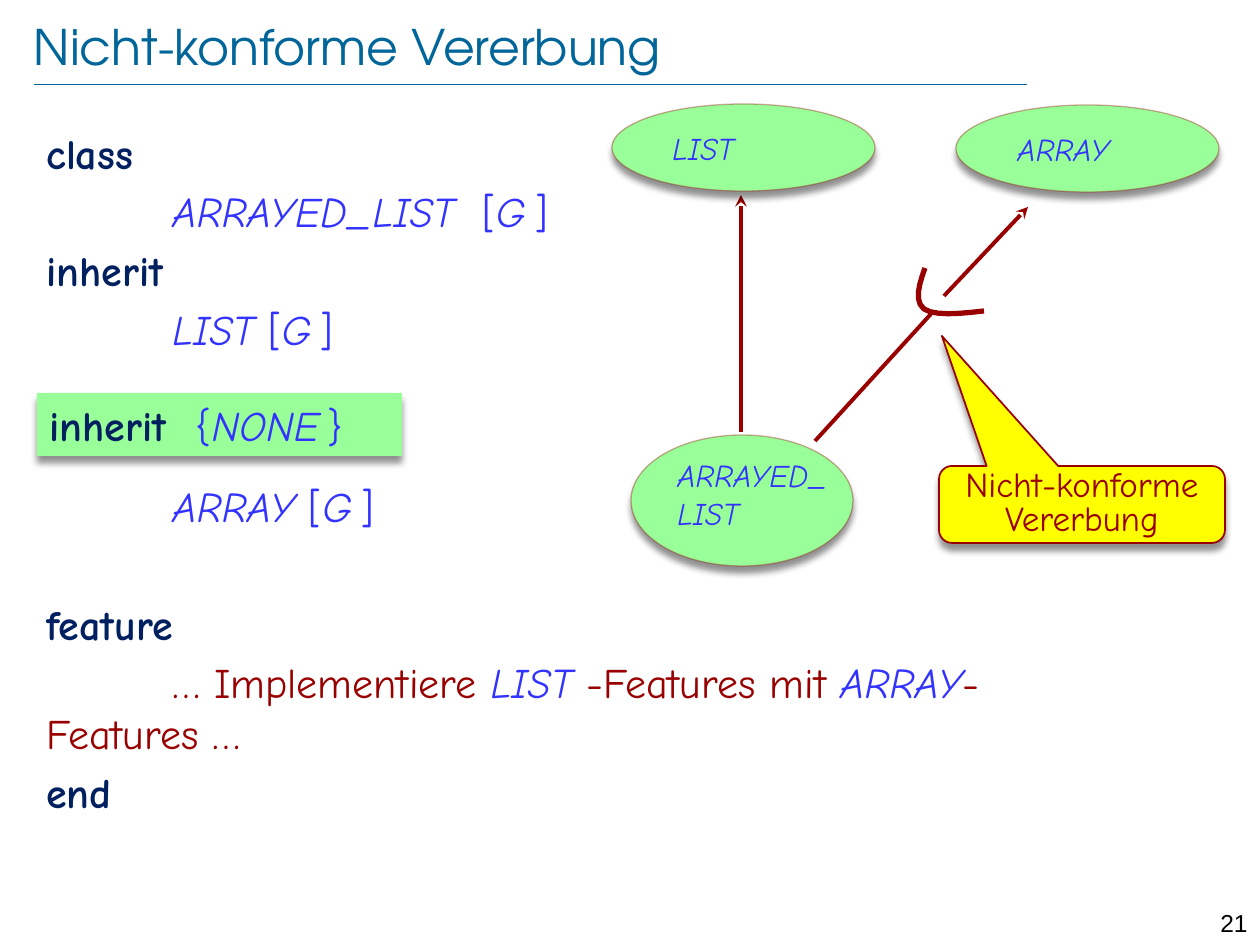
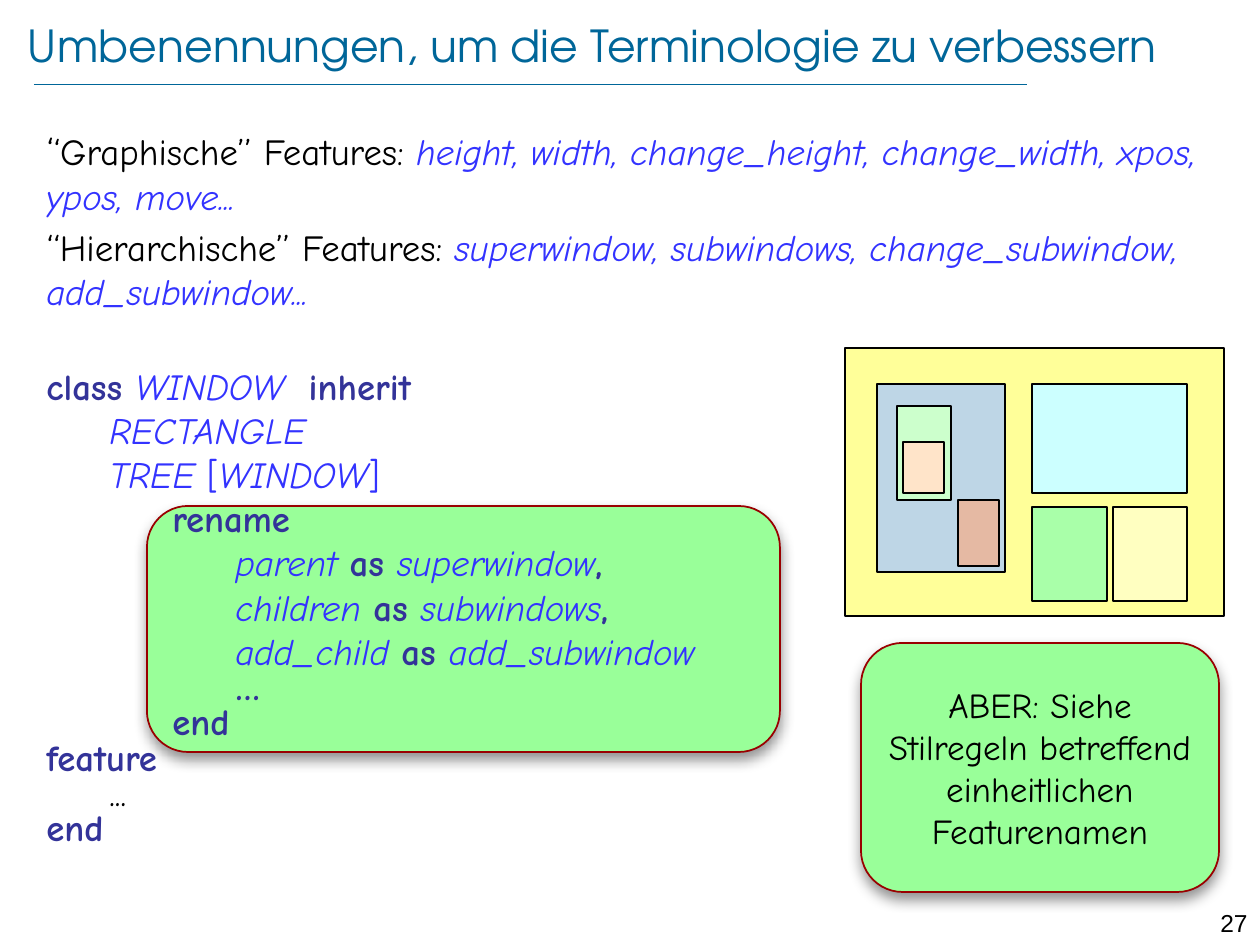
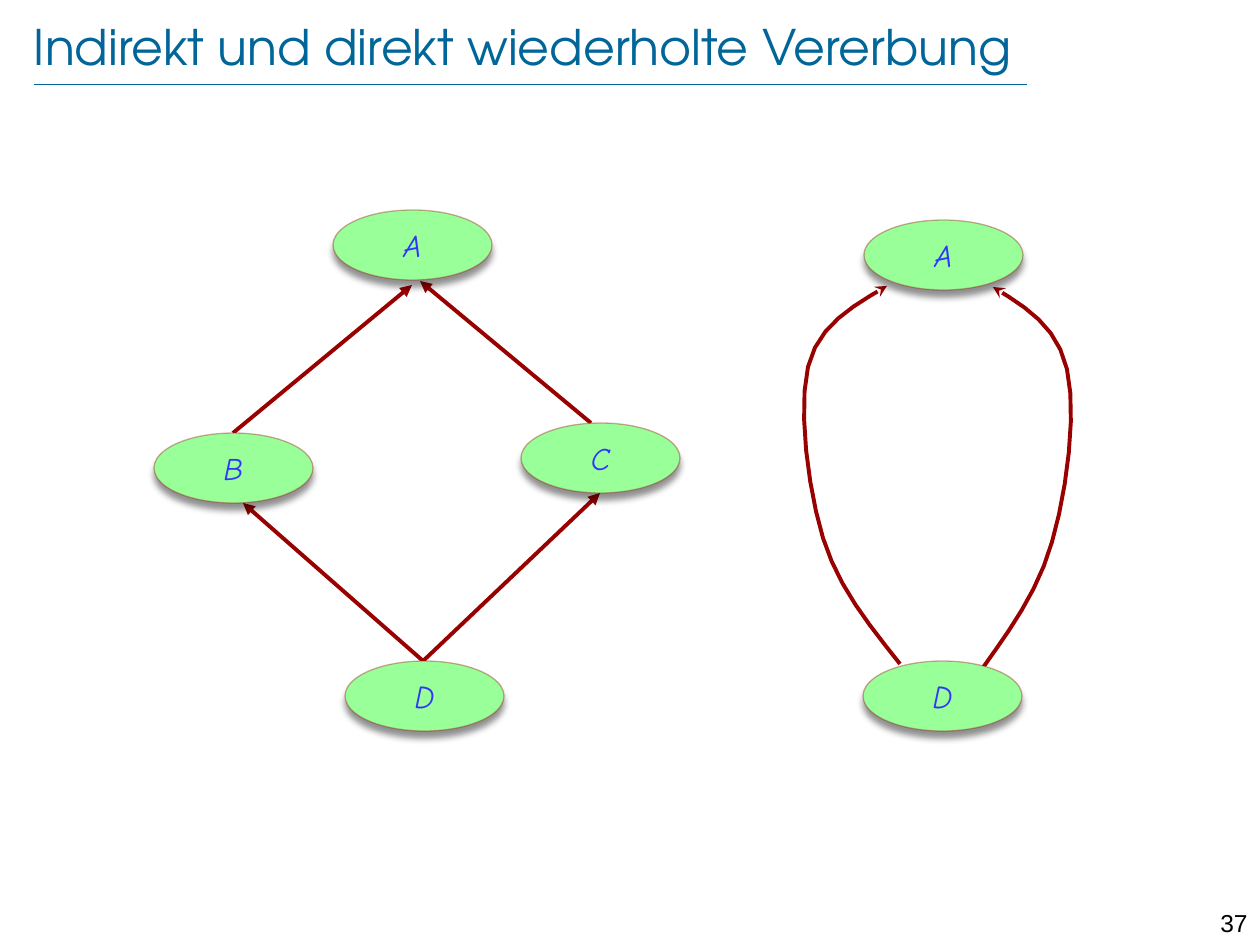
from lxml import etree
from pptx import Presentation
from pptx.dml.color import RGBColor
from pptx.enum.shapes import MSO_CONNECTOR, MSO_SHAPE
from pptx.enum.text import MSO_ANCHOR, MSO_AUTO_SIZE, PP_ALIGN
from pptx.oxml.ns import qn
from pptx.util import Pt

OVAL, RECT, ROUND = MSO_SHAPE.OVAL, MSO_SHAPE.RECTANGLE, MSO_SHAPE.ROUNDED_RECTANGLE
CALLOUT = MSO_SHAPE.ROUNDED_RECTANGULAR_CALLOUT
LINE = MSO_CONNECTOR.STRAIGHT
TOP, MIDDLE = MSO_ANCHOR.TOP, MSO_ANCHOR.MIDDLE
LEFT, CENTER, RIGHT = PP_ALIGN.LEFT, PP_ALIGN.CENTER, PP_ALIGN.RIGHT
FIXED = MSO_AUTO_SIZE.NONE

PX = 914400 / 126
WIDE, HIGH = 1260, 945

TEAL = RGBColor(0x00, 0x66, 0x99)
BLACK = RGBColor(0x00, 0x00, 0x00)
BLUE = RGBColor(0x33, 0x33, 0xFF)
NAVY = RGBColor(0x00, 0x20, 0x60)
INDIGO = RGBColor(0x33, 0x33, 0x99)
RED = RGBColor(0x99, 0x00, 0x00)
GREEN = RGBColor(0x99, 0xFF, 0x99)
YELLOW = RGBColor(0xFF, 0xFF, 0x00)
CREAM = RGBColor(0xFF, 0xFF, 0x99)
STEEL = RGBColor(0xBE, 0xD6, 0xE6)
MINT = RGBColor(0xCC, 0xFF, 0xCC)
PEACH = RGBColor(0xFF, 0xE4, 0xC9)
CLAY = RGBColor(0xE5, 0xB9, 0xA3)
AQUA = RGBColor(0xCC, 0xFF, 0xFF)
LIME = RGBColor(0xA9, 0xFF, 0xA9)
LEMON = RGBColor(0xFF, 0xFF, 0xC1)

# Text looks
HEAD = {"name": "TeX Gyre Adventor", "rgb": TEAL}
FOOT = {"name": "Arial", "size": Pt(14), "rgb": BLACK}
COMIC = {"name": "Comic Neue"}
KEY = {"bold": True, "rgb": NAVY}
WORD = {"bold": True, "rgb": INDIGO}
NAME = {"italic": True, "rgb": BLUE}
MARK = {"rgb": BLUE}
THIN = {"italic": True, "rgb": BLUE, "size": Pt(14)}
SAY = {"rgb": RED}
PLAIN = {"rgb": BLACK}
GENERIC = [("[", MARK), ("G", NAME), (" ", THIN), ("]", MARK)]


def px(*vals):
    return [round(v * PX) for v in vals]


def shift(box, part):
    """Move a part's box, or a list of points, by the corner of its region."""
    return [v + box[i % 2] if i < 2 else v for i, v in enumerate(part)]


def move(box, point):
    return point[0] + box[0], point[1] + box[1]


def dress(font, look):
    for key, val in look.items():
        if key == "rgb":
            font.color.rgb = val
        else:
            setattr(font, key, val)


def write(frame, paras, size, align=LEFT, anchor=TOP, inset=None, wrap=True, base=COMIC):
    """Each paragraph is (runs, format); format may hold an indent in px."""
    frame.auto_size = FIXED
    frame.word_wrap = wrap
    frame.vertical_anchor = anchor
    if inset:
        for side, val in zip(("left", "top", "right", "bottom"), px(*inset)):
            setattr(frame, "margin_" + side, val)
    for num, (runs, form) in enumerate(paras):
        para = frame.add_paragraph() if num else frame.paragraphs[0]
        para.alignment = align
        for key, val in form.items():
            if key == "indent":
                props = para._p.get_or_add_pPr()
                props.set("marL", "0")
                props.set("indent", str(px(val)[0]))
            else:
                setattr(para, key, val)
        for text, look in runs:
            if text == "\n":
                para.add_line_break()
                continue
            run = para.add_run()
            run.text = text
            dress(run.font, {**base, "size": Pt(size), **look})


def stroke(part, color, width, head=None, alpha=None):
    part.line.color.rgb = color
    part.line.width = Pt(width)
    ln = part._element.spPr.find(qn("a:ln"))
    if alpha:
        tint = next(ln.iter(qn("a:srgbClr")))
        etree.SubElement(tint, qn("a:alpha")).set("val", str(alpha * 1000))
    if head:
        etree.SubElement(ln, qn("a:tailEnd")).set("type", head)


def shade(shape, blur):
    glow = etree.SubElement(shape._element.spPr.find(qn("a:effectLst")), qn("a:outerShdw"))
    attrs = {"blurRad": Pt(blur), "dist": Pt(4), "dir": 5400000, "rotWithShape": 0}
    for key, val in attrs.items():
        glow.set(key, str(val))
    tint = etree.SubElement(glow, qn("a:srgbClr"))
    tint.set("val", "000000")
    etree.SubElement(tint, qn("a:alpha")).set("val", "43000")


def block(slide, kind, box, fill, line=None, width=0.75, alpha=None, blur=0):
    shape = slide.shapes.add_shape(kind, *px(*box))
    shape.shadow.inherit = False
    shape.fill.solid()
    shape.fill.fore_color.rgb = fill
    if line is None:
        shape.line.fill.background()
    else:
        stroke(shape, line, width, alpha=alpha)
    if blur:
        shade(shape, blur)
    return shape


def label(slide, box, paras, size, **form):
    area = slide.shapes.add_textbox(*px(*box))
    write(area.text_frame, paras, size, **form)


def link(slide, start, end, color=RED, width=2.25, head=None):
    wire = slide.shapes.add_connector(LINE, *px(*start, *end))
    stroke(wire, color, width, head)
    etree.SubElement(wire._element.spPr, qn("a:effectLst"))


def curve(slide, points, width=2.25, head=None, steps=6):
    """Chain of cubic curves: a start, then two controls and an end for each."""
    track = []
    for first in range(0, len(points) - 1, 3):
        quad = points[first:first + 4]
        for step in range(1, steps + 1):
            t = step / steps
            rate = ((1 - t) ** 3, 3 * t * (1 - t) ** 2, 3 * t * t * (1 - t), t ** 3)
            track.append(px(*(sum(r * p[axis] for r, p in zip(rate, quad)) for axis in (0, 1))))
    pen = slide.shapes.build_freeform(*px(*points[0]))
    pen.add_line_segments(track, close=False)
    shape = pen.convert_to_shape()
    shape.shadow.inherit = False
    shape.fill.background()
    stroke(shape, RED, width, head)


def oval(slide, box, text=None):
    shape = block(slide, OVAL, box, GREEN, RED, alpha=34, blur=4)
    if text:
        write(shape.text_frame, [([(text, NAME)], {})], 18, CENTER, MIDDLE, wrap=False)


def frame(deck, title, number, box, size=28):
    """Slide with its title, rule and number."""
    slide = deck.slides.add_slide(deck.slide_layouts[5])
    link(slide, (34, 84), (1027, 84), TEAL, 0.25)
    label(slide, (1191, 902, 69, 30), [([(number, {})], {})], 14, align=RIGHT, base=FOOT)
    head = slide.shapes.title
    head.left, head.top, head.width, head.height = px(*box)
    write(head.text_frame, [([(title, {})], {})], size, anchor=MIDDLE,
          inset=(0, 0, 0, 0), base=HEAD)
    return slide


# Slide 1: code on the left
def arrayed(slide, box):
    gap = {"space_before": Pt(4.8)}
    deep = {**gap, "indent": 126}
    label(slide, box, [
        ([("class", KEY)], {}),
        ([("ARRAYED_LIST  ", NAME)] + GENERIC, deep),
        ([("inherit", KEY)], gap),
        ([("LIST ", NAME)] + GENERIC, deep),
        ([("ARRAY ", NAME)] + GENERIC, {**deep, "space_before": Pt(72.5)}),
        ([("feature", KEY)], {"space_before": Pt(38.2)}),
        ([("… Implementiere ", SAY), ("LIST ", NAME), ("-Features mit ", SAY),
          ("ARRAY", NAME), ("-", SAY), ("\n", SAY), ("Features …", SAY)], deep),
        ([("end", KEY)], gap),
    ], 24)
    none = block(slide, RECT, shift(box, (3, 272, 365, 63)), GREEN, blur=4)
    write(none.text_frame, [([("inherit  ", KEY), ("{", MARK), ("NONE", NAME),
                              (" ", THIN), ("}", MARK)], {})], 24)


# Slide 1: inheritance tree on the right
def tree(slide, box):
    for start, end, head in (((129, 328), (129, 91), "stealth"),
                             ((203, 337), (319, 210), None),
                             ((332, 192), (416, 103), "stealth")):
        link(slide, move(box, start), move(box, end), head=head)
    cut = [(372, 207), (347, 210), (322, 212), (312, 205), (302, 197), (307, 181), (313, 164)]
    curve(slide, [move(box, p) for p in cut], 3)
    for text, ring, area in (("LIST", (0, 0, 263, 87), (48, 19, 198, 50)),
                             ("ARRAY", (344, 1, 263, 87), (393, 20, 198, 50)),
                             ("ARRAYED_LIST", (19, 331, 222, 131), (53, 346, 188, 89))):
        oval(slide, shift(box, ring))
        label(slide, shift(box, area), [([(text, NAME)], {})], 18)
    note = block(slide, CALLOUT, shift(box, (327, 362, 286, 77)), YELLOW, RED, 1, blur=4)
    for num, val in enumerate((-0.49, -2.19, 0.17)):
        note.adjustments[num] = val
    write(note.text_frame, [([("Nicht-konforme Vererbung", SAY)], {"line_spacing": 0.8})],
          20, CENTER, MIDDLE, (0, 6, 0, 6))


# Slide 2: feature lists and class text over the rename panel
def rename(slide, box):
    block(slide, ROUND, shift(box, (113, 385, 633, 246)), GREEN, RED, 1, blur=8)
    one, two, three = ({"indent": 63 * level} for level in (1, 2, 3))
    tight = {"line_spacing": 0.8}
    pairs = (("parent ", "superwindow", ","), ("children ", "subwindows", ","),
             ("add_child ", "add_subwindow", ""))
    label(slide, box, [
        ([("‘", {**PLAIN, "size": Pt(22)}), ("‘Graphische’’ Features: ", PLAIN),
          ("height, width, change_height, change_width, xpos, ypos, move...", NAME)], {}),
        ([("‘‘Hierarchische’’ Features: ", PLAIN),
          ("superwindow, subwindows, change_subwindow, add_subwindow...", NAME)],
         {"space_before": Pt(4.2)}),
        ([("class ", WORD), ("WINDOW  ", NAME), ("inherit", WORD)], {"space_before": Pt(29)}),
        ([("RECTANGLE", NAME)], one),
        ([("TREE ", NAME), ("[", MARK), ("WINDOW", NAME), ("]", MARK)], one),
        ([("rename", WORD)], two),
        *(([(old, NAME), ("as ", WORD), (new, NAME)] + ([(end, WORD)] if end else []), three)
          for old, new, end in pairs),
        ([("…", WORD)], {**three, **tight}),
        ([("end", WORD)], {**two, **tight}),
        ([("feature", WORD)], tight),
        ([("...", PLAIN)], {**one, **tight}),
        ([("end", WORD)], tight),
    ], 21)


# Slide 2: nested windows
def windows(slide, box):
    for part, fill in (((0, 0, 379, 268), CREAM), ((32, 36, 128, 188), STEEL),
                       ((52, 58, 54, 94), MINT), ((58, 94, 41, 51), PEACH),
                       ((113, 152, 41, 66), CLAY), ((187, 36, 155, 109), AQUA),
                       ((187, 159, 75, 94), LIME), ((268, 159, 74, 94), LEMON)):
        block(slide, RECT, shift(box, part), fill, BLACK)


def remark(slide, box):
    shape = block(slide, ROUND, box, GREEN, RED, 1, blur=8)
    text = "ABER: Siehe Stilregeln betreffend einheitlichen Featurenamen"
    write(shape.text_frame, [([(text, PLAIN)], {})], 20, CENTER, MIDDLE)


# Slide 3: one function for each graph
def nodes(slide, box, places):
    for text, x, y in places:
        oval(slide, shift(box, (x, y, 159, 70)), text)


def diamond(slide, box):
    for start, end in (((79, 223), (258, 75)), ((437, 213), (266, 71)),
                       ((267, 453), (446, 283)), ((268, 450), (89, 293))):
        link(slide, move(box, start), move(box, end), head="triangle")
    nodes(slide, box, (("A", 179, 0), ("D", 191, 451), ("B", 0, 223), ("C", 367, 213)))


def loop(slide, box):
    left = [(102, 444), (71, 405), (40, 367), (25, 318), (10, 269),
            (0, 190), (10, 147), (20, 105), (55, 86), (89, 66)]
    right = [(184, 449), (211, 411), (240, 372), (254, 322), (269, 271),
             (279, 192), (269, 149), (259, 106), (228, 87), (195, 67)]
    for side in (left, right):
        curve(slide, [move(box, p) for p in side], head="stealth")
    nodes(slide, box, (("A", 66, 0), ("D", 65, 441)))


def main():
    deck = Presentation()
    deck.slide_width, deck.slide_height = px(WIDE, HIGH)

    slide = frame(deck, "Nicht-konforme Vererbung", "21", (34, 16, 1095, 60))
    arrayed(slide, (34, 121, 1184, 777))
    tree(slide, (612, 104, 613, 463))

    slide = frame(deck, "Umbenennungen, um die Terminologie zu verbessern", "27",
                  (28, 0, 1192, 90), 25.2)
    rename(slide, (34, 121, 1184, 777))
    windows(slide, (845, 348, 379, 268))
    remark(slide, (861, 643, 358, 249))

    slide = frame(deck, "Indirekt und direkt wiederholte Vererbung", "37",
                  (34, 16, 1182, 60))
    diamond(slide, (154, 210, 526, 521))
    loop(slide, (798, 220, 279, 511))

    deck.save("out.pptx")


if __name__ == "__main__":
    main()
